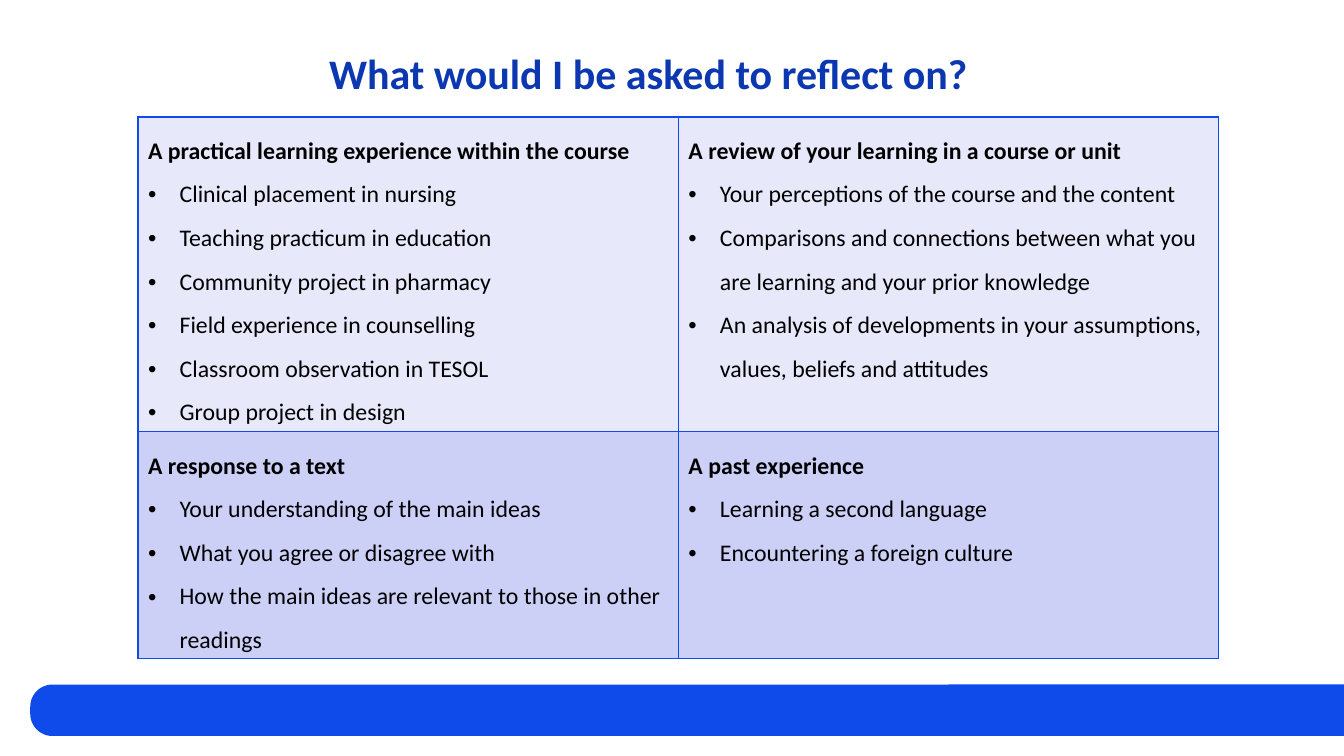
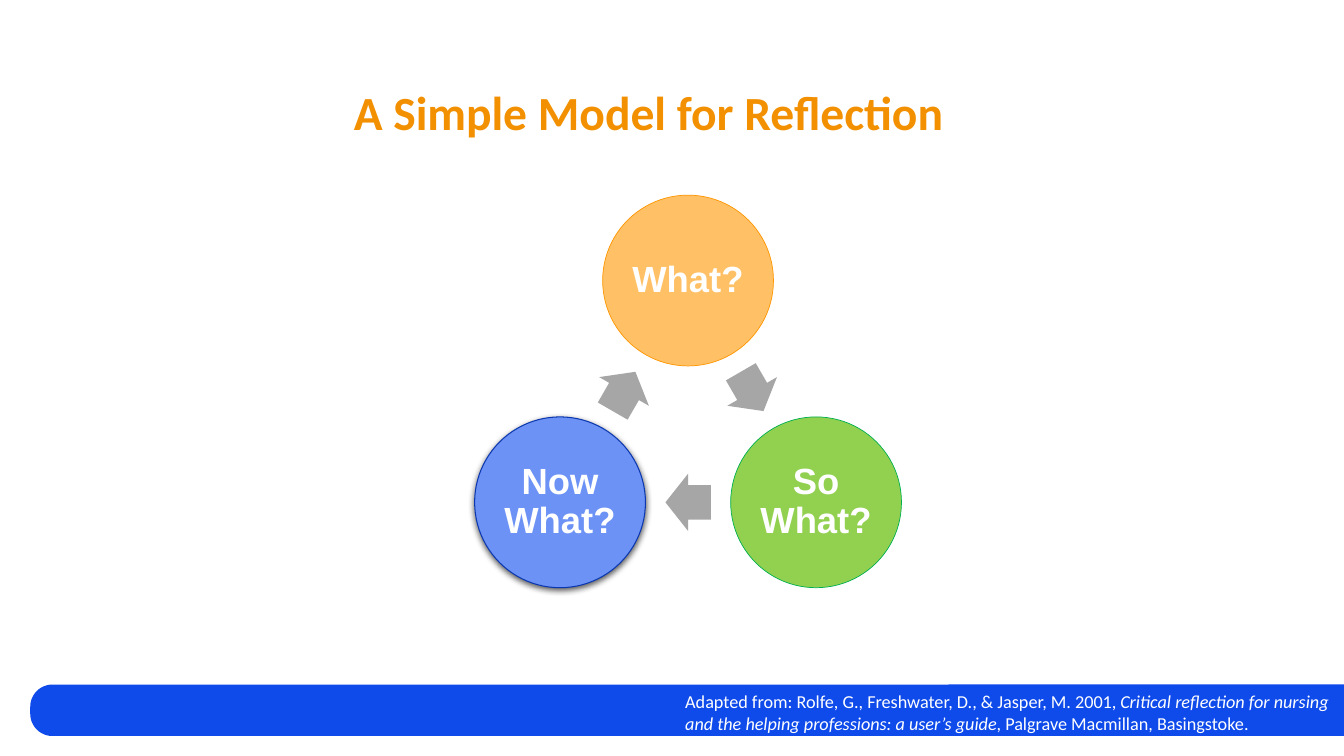
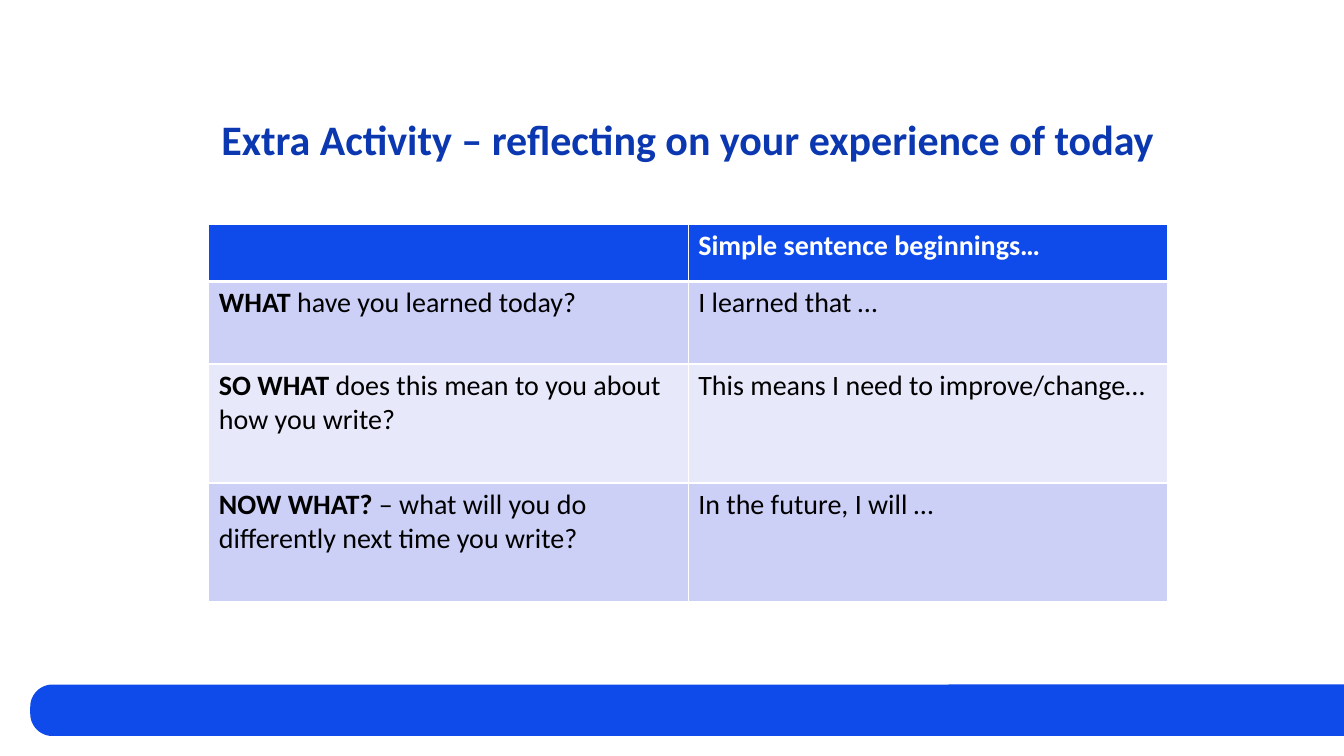
"""Build three slides on reflective writing."""
import dataclasses
import math

import lxml.etree
import pptx
import pptx.dml.color
import pptx.enum.shapes
import pptx.enum.text
import pptx.oxml.ns
import pptx.util

Pt = pptx.util.Pt
qn = pptx.oxml.ns.qn
Shape = pptx.enum.shapes.MSO_SHAPE
Align = pptx.enum.text.PP_ALIGN
Anchor = pptx.enum.text.MSO_ANCHOR


@dataclasses.dataclass(frozen=True)
class Theme:
    """Colours, fonts and type sizes."""
    band: str = "0F4BEB"
    navy: str = "0B38B0"
    gold: str = "F29000"
    pale: str = "E7E9FB"
    lilac: str = "CCD0F7"
    grey: str = "A6A6A6"
    white: str = "FFFFFF"
    black: str = "000000"
    body: str = "Calibri"
    node: str = "Arial"
    title: int = 30
    large: int = 34
    label: int = 26
    cell: int = 20
    item: int = 17
    note: int = 13


def rgb(code):
    """Turn a hex code into a colour."""
    return pptx.dml.color.RGBColor.from_string(code)


def child(node, tag, **attrs):
    """Add an XML child with the given attributes."""
    part = lxml.etree.SubElement(node, qn(tag))
    for key, val in attrs.items():
        part.set(key, str(val))
    return part


def apply(item, form):
    """Set attributes from a dict of format values."""
    for key, val in form.items():
        setattr(item, key, val)


class Deck:
    """Hold the style and the current slide."""

    def __init__(self, theme):
        """Start an empty wide deck."""
        self.theme = theme
        self.show = pptx.Presentation()
        apply(self.show, {"slide_width": Pt(960), "slide_height": Pt(540)})

    def page(self):
        """Add a blank slide with the foot band."""
        self.slide = self.show.slides.add_slide(self.show.slide_layouts[6])
        band = self.shape(Shape.ROUND_2_SAME_RECTANGLE, 490.8, 507.3,
                          36.8, 938.4, self.theme.band, turn=270)
        band.adjustments[0] = 0.43

    def shape(self, kind, midx, midy, wide, high, fill, line=None, turn=0):
        """Draw a preset shape around its centre."""
        item = self.slide.shapes.add_shape(
            kind, Pt(midx - wide / 2), Pt(midy - high / 2), Pt(wide), Pt(high))
        item.shadow.inherit = False
        item.rotation = turn
        item.fill.solid()
        item.fill.fore_color.rgb = rgb(fill)
        if line:
            item.line.color.rgb = rgb(line[0])
            item.line.width = Pt(line[1])
        else:
            item.line.fill.background()
        return item

    def words(self, frame, paras, size, tint, face=None, bullet=False, **form):
        """Fill a frame with paragraphs of (text, format) runs."""
        for num, runs in enumerate(paras):
            para = frame.add_paragraph() if num else frame.paragraphs[0]
            if bullet and num:
                props = para._p.get_or_add_pPr()
                props.set("marL", str(Pt(22.5)))
                props.set("indent", str(-Pt(22.5)))
                child(props, "a:buFont", typeface="Arial")
                child(props, "a:buChar", char="•")
            apply(para, form)
            for text, style in runs:
                run = para.add_run()
                run.text = text
                base = {"size": Pt(size), "name": face or self.theme.body}
                apply(run.font, {**base, **style})
                run.font.color.rgb = rgb(tint)

    def text(self, left, top, wide, high, paras, size, tint, **form):
        """Place a wrapped text box."""
        box = self.slide.shapes.add_textbox(Pt(left), Pt(top), Pt(wide), Pt(high))
        box.text_frame.word_wrap = True
        self.words(box.text_frame, paras, size, tint, **form)

    def title(self, text, left, top, wide, size, tint):
        """Place a centred bold title."""
        self.text(left, top, wide, 72, [[(text, {"bold": True})]], size, tint,
                  alignment=Align.CENTER, line_spacing=0.9)

    def table(self, left, top, wide, rows):
        """Add a plain table with two equal columns."""
        frame = self.slide.shapes.add_table(
            len(rows), 2, Pt(left), Pt(top), Pt(2 * wide), Pt(sum(rows)))
        grid = frame.table
        apply(grid, {"first_row": False, "horz_banding": False})
        for col in grid.columns:
            col.width = Pt(wide)
        for row, high in zip(grid.rows, rows):
            row.height = Pt(high)
        return grid

    def cell(self, cell, paras, fill, edge, size, tint, pad, thick, **form):
        """Style one cell and set its text."""
        props = cell._tc.get_or_add_tcPr()
        for side in "LRTB":
            line = child(props, "a:ln" + side, w=Pt(thick.get(side, 1)))
            child(child(line, "a:solidFill"), "a:srgbClr", val=edge)
        cell.fill.solid()
        cell.fill.fore_color.rgb = rgb(fill)
        apply(cell, {"margin_left": Pt(7.2), "margin_right": Pt(7.2),
                     "margin_top": Pt(pad), "margin_bottom": Pt(pad)})
        self.words(cell.text_frame, paras, size, tint, **form)

    def node(self, midx, midy, text, fill, line):
        """Draw a labelled circle."""
        ball = self.shape(Shape.OVAL, midx, midy, 122, 122, fill, line)
        frame = ball.text_frame
        apply(frame, {"word_wrap": True, "vertical_anchor": Anchor.MIDDLE})
        apply(frame, {"margin_" + side: Pt(2.8)
                      for side in ("left", "right", "top", "bottom")})
        self.words(frame, [[(text, {"bold": True})]], self.theme.label,
                   self.theme.white, self.theme.node,
                   alignment=Align.CENTER, line_spacing=0.9)
        return ball

    def shade(self, item):
        """Give a shape a soft shadow below."""
        glow = item._element.spPr.find(qn("a:effectLst"))
        drop = child(glow, "a:outerShdw", blurRad=Pt(4.5), dist=Pt(1.5),
                     dir=5400000, rotWithShape=0)
        tint = child(drop, "a:srgbClr", val=self.theme.black)
        child(tint, "a:alpha", val=63000)


def topics(deck):
    """Build the slide of things to reflect on."""
    look = deck.theme
    deck.page()
    deck.title("What would I be asked to reflect on?", 37.4, 34.6, 851.8,
               look.title, look.navy)
    cells = [
        [["A practical learning experience within the course",
          "Clinical placement in nursing",
          "Teaching practicum in education",
          "Community project in pharmacy",
          "Field experience in counselling",
          "Classroom observation in TESOL",
          "Group project in design"],
         ["A review of your learning in a course or unit",
          "Your perceptions of the course and the content",
          "Comparisons and connections between what you are learning "
          "and your prior knowledge",
          "An analysis of developments in your assumptions, values, "
          "beliefs and attitudes"]],
        [["A response to a text",
          "Your understanding of the main ideas",
          "What you agree or disagree with",
          "How the main ideas are relevant to those in other readings"],
         ["A past experience",
          "Learning a second language",
          "Encountering a foreign culture"]],
    ]
    grid = deck.table(98.6, 83.5, 386, [225, 162])
    for row, fill in enumerate((look.pale, look.lilac)):
        for col, lines in enumerate(cells[row]):
            paras = [[(line, {"bold": num == 0})]
                     for num, line in enumerate(lines)]
            deck.cell(grid.cell(row, col), paras, fill, look.band, look.item,
                      look.black, 3.6, {}, bullet=True, line_spacing=1.5)


def model(deck):
    """Build the slide of the three-step cycle."""
    look = deck.theme
    deck.page()
    deck.title("A Simple Model for Reflection", 37.4, 60.5, 851.8,
               look.large, look.gold)
    midx, midy, reach = 491.5, 306, 105.6
    steps = [("What?", "FFC066", ("FF9600", 0.5)),
             ("So What?", "92D050", ("00B050", 0.5)),
             ("Now What?", "6C92F6", (look.navy, 0.75))]

    def spot(turn, far):
        """Find a point on a ring around the middle."""
        rad = math.radians(turn)
        return midx + far * math.cos(rad), midy + far * math.sin(rad)

    for num, step in enumerate(steps):
        turn = 120 * num
        ball = deck.node(*spot(turn - 90, reach), *step)
        arrow = deck.shape(Shape.RIGHT_ARROW, *spot(turn - 30, reach / 2),
                           32.4, 41, look.grey, turn=turn + 60)
        arrow.adjustments[0] = 0.6
    deck.shade(ball)
    deck.text(482.4, 489.6, 477.4, 38.9, [[
        ("Adapted from: Rolfe, G., Freshwater, D., & Jasper, M. 2001, ", {}),
        ("Critical reflection for nursing and the helping professions: "
         "a user’s guide", {"italic": True}),
        (", Palgrave Macmillan, Basingstoke.", {})]], look.note, look.white)


def task(deck):
    """Build the slide of the closing activity."""
    look = deck.theme
    deck.page()
    deck.title("Extra Activity – reflecting on your experience of today",
               85, 81.4, 812.9, look.title, look.navy)
    rows = [
        ("", "", "Simple sentence beginnings…"),
        ("WHAT", " have you learned today?", "I learned that …"),
        ("SO WHAT ", "does this mean to you about how you write?",
         "This means I need to improve/change…"),
        ("NOW WHAT? ", "– what will you do differently next time you write?",
         "In the future, I will …"),
    ]
    fills = [look.band, look.lilac, look.pale, look.lilac]
    edges = [{"B": 3}, {"T": 3}, {}, {}]
    grid = deck.table(149.2, 160, 342.4, [41, 59, 85, 85])
    for num, (key, rest, start) in enumerate(rows):
        head = num == 0
        ask = [(key, {"bold": True}), (rest, {})] if key else []
        for col, runs in enumerate((ask, [(start, {"bold": head})])):
            deck.cell(grid.cell(num, col), [runs], fills[num], look.white,
                      look.cell, look.white if head else look.black,
                      3.2, edges[num])


def main():
    """Build and save the deck."""
    deck = Deck(Theme())
    for build in (topics, model, task):
        build(deck)
    deck.show.save("out.pptx")


if __name__ == "__main__":
    main()
